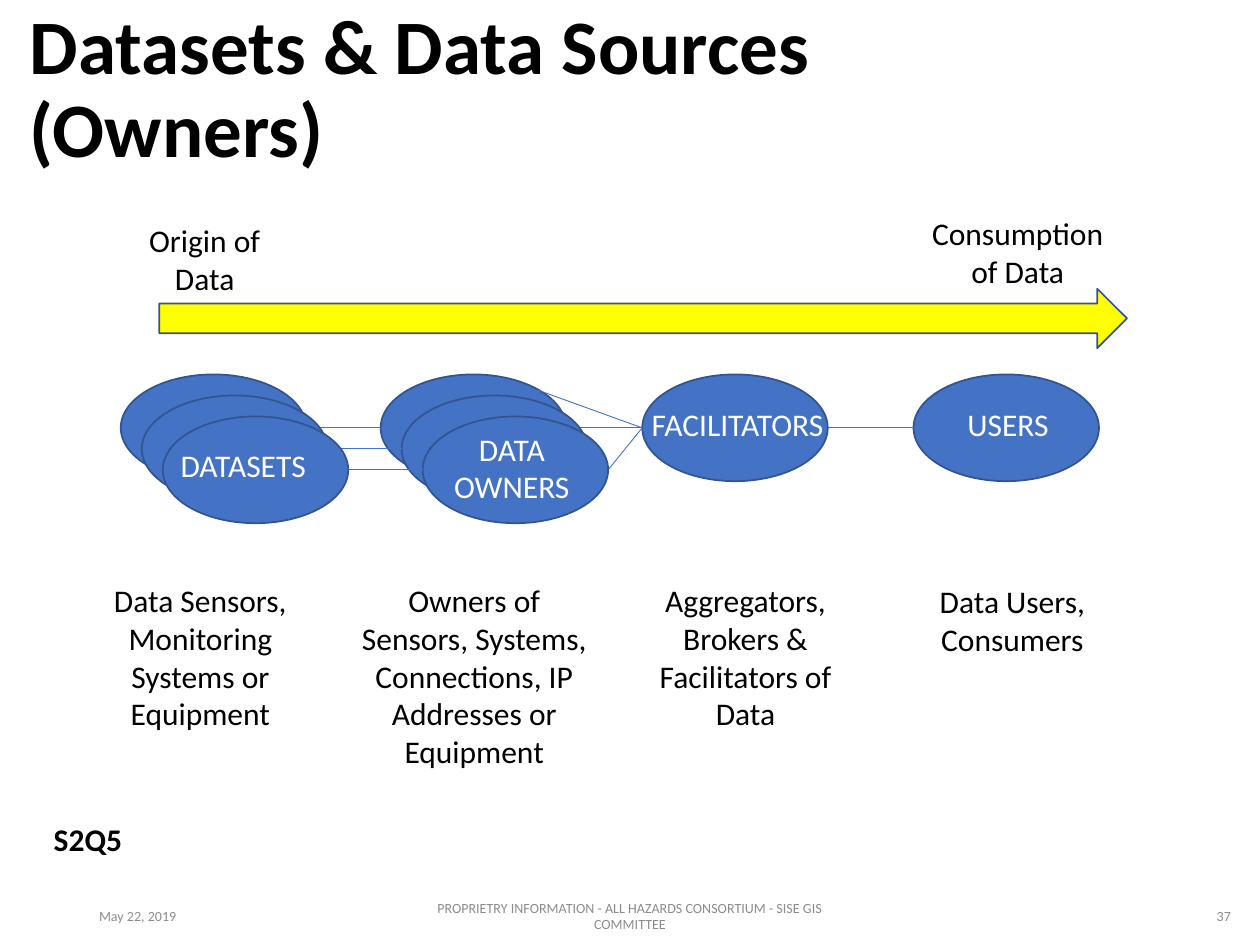
import pptx
import pptx.util
import pptx.dml.color
import pptx.enum.shapes
import pptx.enum.text
import lxml.etree

Pt = pptx.util.Pt
SHAPE = pptx.enum.shapes.MSO_SHAPE
ALIGN = pptx.enum.text.PP_ALIGN
ANCHOR = pptx.enum.text.MSO_ANCHOR
RGB = pptx.dml.color.RGBColor.from_string
HUES = {"black": "000000", "white": "FFFFFF", "grey": "8C8C8C",
        "blue": "4472C4", "navy": "325491", "yellow": "FFFF00"}

deck = pptx.Presentation()
deck.slide_width, deck.slide_height = Pt(720), Pt(540)
slide = deck.slides.add_slide(deck.slide_layouts[6])


def write(text, x, y, w, h, size=18, hue="black", bold=False,
          align=ALIGN.CENTER, anchor=ANCHOR.TOP, space=1.0):
    box = slide.shapes.add_textbox(Pt(x), Pt(y), Pt(w), Pt(h))
    frame = box.text_frame
    frame.word_wrap = True
    frame.vertical_anchor = anchor
    frame.text = text
    for para in frame.paragraphs:
        para.alignment = align
        para.line_spacing = space
        para.font.name = "Calibri"
        para.font.size = Pt(size)
        para.font.bold = bold
        para.font.color.rgb = RGB(HUES[hue])


def draw(kind, x, y, w, h, hue):
    shape = slide.shapes.add_shape(kind, Pt(x), Pt(y), Pt(w), Pt(h))
    shape.shadow.inherit = False
    shape.fill.solid()
    shape.fill.fore_color.rgb = RGB(HUES[hue])
    shape.line.color.rgb = RGB(HUES["navy"])
    shape.line.width = Pt(1)


wide, high = 106, 61
top = 214
mid = top + high / 2
step = 12
data, owner, broker, user = 69, 217.5, 367, 522

write("Datasets & Data Sources (Owners)", 10, 0, 620.5, 104.5, size=44, bold=True,
      align=ALIGN.LEFT, anchor=ANCHOR.MIDDLE, space=0.9)

for text, x, w, align in [
    ("May 22, 2019", 49.5, 162, ALIGN.LEFT),
    ("PROPRIETRY INFORMATION - ALL HAZARDS CONSORTIUM - SISE GIS COMMITTEE",
     238.5, 243, ALIGN.CENTER),
    ("37", 548.5, 162, ALIGN.RIGHT),
]:
    write(text, x, 509, w, 28.75, size=8, hue="grey", align=align, anchor=ANCHOR.MIDDLE)

draw(SHAPE.RIGHT_ARROW, 91, 165, 553, 34, "yellow")
for x in (broker, user):
    draw(SHAPE.OVAL, x, top, wide, high, "blue")

links = [
    (owner + wide, mid, broker, mid),
    (broker + wide, mid, user, mid),
    (307.5, 223, broker, mid),
    (owner + 2 * step + wide, mid + 2 * step, broker, mid),
]
for layer in range(3):
    gap = layer * step
    links.append((data + gap + wide, mid + gap, owner + gap, mid + gap))

for layer in range(3):
    gap = layer * step
    for x in (data, owner):
        draw(SHAPE.OVAL, x + gap, top + gap, wide, high, "blue")
    if layer == 0:
        for ax, ay, bx, by in links[:1] + links[4:5]:
            pass
    for ax, ay, bx, by in [links[4 + layer]] + (links[:4] if layer == 0 else []):
        line = slide.shapes.add_connector(
            pptx.enum.shapes.MSO_CONNECTOR.STRAIGHT, Pt(ax), Pt(ay), Pt(bx), Pt(by))
        line.line.color.rgb = RGB(HUES["blue"])
        line.line.width = Pt(0.5)
        lxml.etree.SubElement(line.element.spPr, pptx.oxml.ns.qn("a:effectLst"))

for text, x, y, w, h in [
    ("Origin of Data", 70, 123, 94, 51),
    ("Consumption of Data", 524, 119, 115, 51),
    ("Data Sensors, Monitoring Systems or Equipment", 44.5, 328.5, 140, 94.5),
    ("Owners of Sensors, Systems, Connections, IP Addresses or Equipment",
     198.5, 328.5, 145, 116.5),
    ("Aggregators, Brokers & Facilitators of Data", 353.5, 328.5, 145, 94.5),
    ("Data Users, Consumers", 506, 329, 145, 51),
]:
    write(text, x, y, w, h)

write("S2Q5", 20, 465, 60.5, 29, bold=True)

for text, x, y, h in [
    ("DATASETS", 77, 251.5, 29),
    ("DATA\nOWNERS", 230.5, 242, 51),
    ("FACILITATORS", 359.5, 228, 29),
    ("USERS", 514, 228, 29),
]:
    write(text, x, y, 124, h, hue="white")

deck.save("out.pptx")
